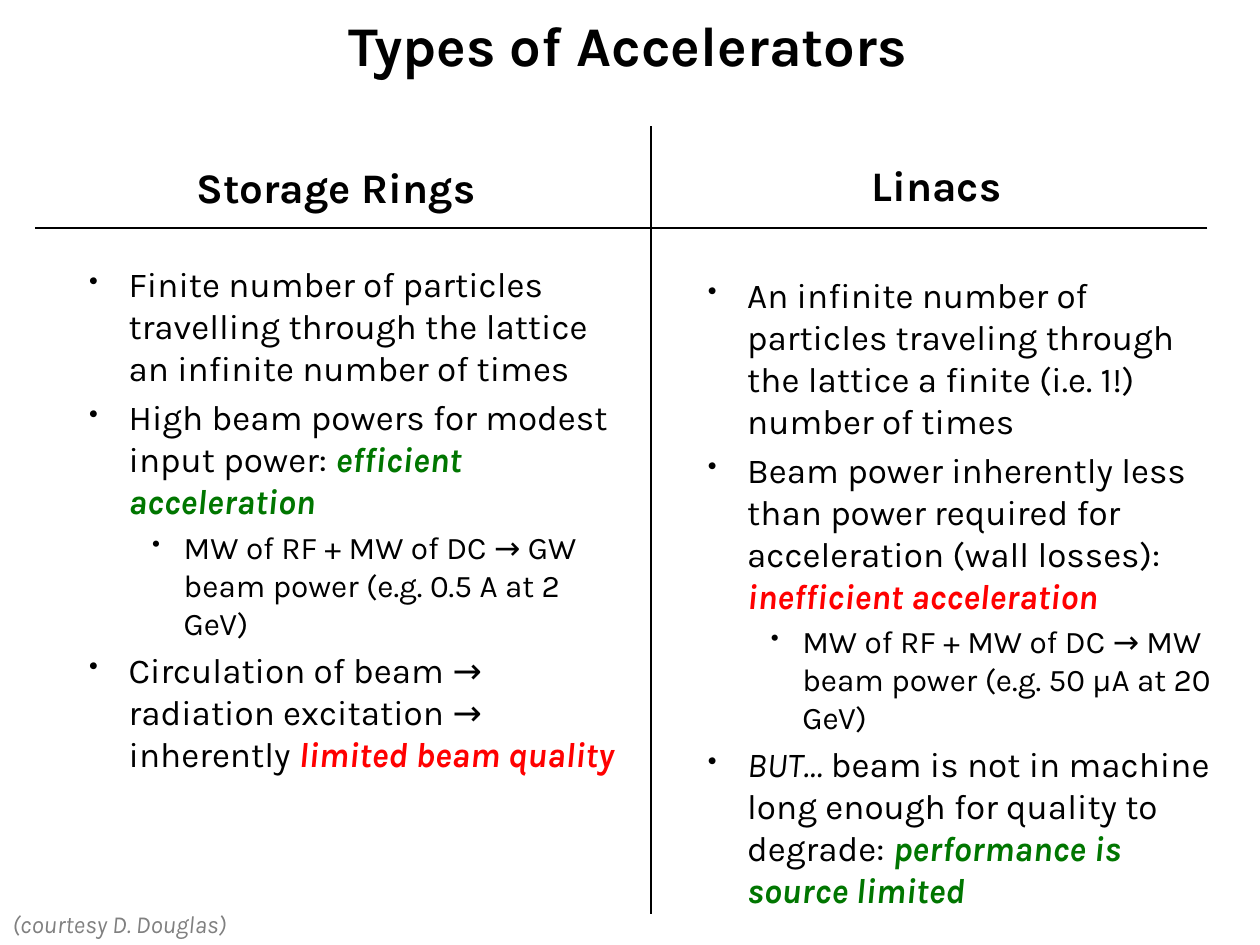
"""Build a two-column slide comparing storage rings with linacs."""
from dataclasses import dataclass

from lxml.etree import SubElement
from pptx import Presentation
from pptx.dml.color import RGBColor
from pptx.enum.shapes import MSO_CONNECTOR
from pptx.enum.text import MSO_ANCHOR, MSO_AUTO_SIZE, PP_ALIGN
from pptx.oxml.ns import qn
from pptx.util import Pt

FONT = "Karla"
BLACK, GRAY, GREEN, RED = "000000", "808080", "007600", "FF0000"
INDENTS = {1: (58.5, -22.5), 2: (90, -18)}
SIZES = {1: 20, 2: 18}


@dataclass
class Span:
    text: str
    color: str = BLACK
    bold: bool = False
    italic: bool = False


@dataclass
class Bullet:
    spans: list[Span]
    level: int = 1


@dataclass
class Label:
    text: str
    box: tuple[float, float, float, float]
    size: float
    color: str = BLACK
    bold: bool = True
    italic: bool = False


@dataclass
class Column:
    heading: Label
    box: tuple[float, float, float, float]
    bullets: list[Bullet]


def rgb(color: str) -> RGBColor:
    """Turn a hex string into a colour."""
    return RGBColor.from_string(color)


def strong(text: str, color: str) -> Span:
    """Return a coloured bold italic span."""
    return Span(text, color, True, True)


def style(r, size: float, color: str, bold: bool, italic: bool) -> None:
    """Format one run."""
    r.font.name, r.font.size = FONT, Pt(size)
    r.font.bold, r.font.italic = bold, italic
    r.font.color.rgb = rgb(color)


def add_box(s, box: tuple[float, float, float, float]):
    """Add an empty text box."""
    return s.shapes.add_textbox(*map(Pt, box))


def fill_label(sp, label: Label) -> None:
    """Put a single formatted line into a shape."""
    tf = sp.text_frame
    tf.text = label.text
    tf.word_wrap, tf.auto_size = True, MSO_AUTO_SIZE.NONE
    p = tf.paragraphs[0]
    p.alignment = PP_ALIGN.LEFT
    style(p.runs[0], label.size, label.color, label.bold, label.italic)


def add_label(s, label: Label) -> None:
    """Add a text box with a single line."""
    fill_label(add_box(s, label.box), label)


def fill_bullet(p, bullet: Bullet, space: float) -> None:
    """Write a bulleted paragraph with its indents and spans."""
    p.level, p.space_before = bullet.level, Pt(space)
    margin, indent = INDENTS[bullet.level]
    pPr = p._p.get_or_add_pPr()
    pPr.set("marL", str(int(Pt(margin))))
    pPr.set("indent", str(int(Pt(indent))))
    SubElement(pPr, qn("a:buSzPct")).set("val", "75000")
    SubElement(pPr, qn("a:buChar")).set("char", "•")
    for span in bullet.spans:
        r = p.add_run()
        r.text = span.text
        style(r, SIZES[bullet.level], span.color, span.bold, span.italic)


def add_column(s, column: Column) -> None:
    """Add a heading and its bulleted list."""
    add_label(s, column.heading)
    tf = add_box(s, column.box).text_frame
    tf.word_wrap, tf.margin_top = True, Pt(30)
    for i, bullet in enumerate(column.bullets):
        p = tf.add_paragraph() if i else tf.paragraphs[0]
        fill_bullet(p, bullet, SIZES[bullet.level] * 0.2 if i else 0)


def add_line(s, x1: float, y1: float, x2: float, y2: float) -> None:
    """Add a black rule without a shadow."""
    sp = s.shapes.add_connector(MSO_CONNECTOR.STRAIGHT, Pt(x1), Pt(y1), Pt(x2), Pt(y2))
    sp.line.color.rgb, sp.line.width = rgb(BLACK), Pt(1.5)
    SubElement(sp._element.spPr, qn("a:effectLst"))


TITLE = Label("Types of Accelerators", (192.2, 2.2, 361.4, 46), 32)
CREDIT = Label("(courtesy D. Douglas)", (0, 516.2, 150.5, 24.5), 14, GRAY, False, True)
COLUMNS = [
    Column(Label("Storage Rings", (105.1, 88.6, 185, 36), 24), (7.9, 120.2, 358.6, 414), [
        Bullet([Span("Finite number of particles travelling through the lattice "
                     "an infinite number of times")]),
        Bullet([Span("High beam powers for modest input power: "),
                strong("efficient acceleration", GREEN)]),
        Bullet([Span("MW of RF + MW of DC → GW beam power (e.g. 0.5 A at 2 GeV)")], 2),
        Bullet([Span("Circulation of beam → radiation excitation → inherently "),
                strong("limited beam quality", RED)]),
    ]),
    Column(Label("Linacs", (491, 87.8, 90.7, 36), 24), (361.4, 126, 342, 414), [
        Bullet([Span("An infinite number of particles traveling through the lattice "
                     "a finite (i.e. 1!) number of times")]),
        Bullet([Span("Beam power inherently less than power required for "
                     "acceleration (wall losses): "),
                strong("inefficient acceleration", RED)]),
        Bullet([Span("MW of RF + MW of DC → MW beam power (e.g. 50 μA at 20 GeV)")], 2),
        Bullet([Span("BUT…", italic=True),
                Span(" beam is not in machine long enough for quality to degrade: "),
                strong("performance is source limited", GREEN)]),
    ]),
]


def main() -> None:
    """Build and save the slide."""
    prs = Presentation()
    prs.slide_width, prs.slide_height = Pt(720), Pt(540)
    s = prs.slides.add_slide(prs.slide_layouts[5])
    title = s.shapes.title
    title.left, title.top, title.width, title.height = map(Pt, TITLE.box)
    fill_label(title, TITLE)
    title.text_frame.vertical_anchor = MSO_ANCHOR.MIDDLE
    for column in COLUMNS:
        add_column(s, column)
    add_label(s, CREDIT)
    add_line(s, 372, 72, 372, 522)
    add_line(s, 690, 130.3, 20.2, 130.3)
    prs.save("out.pptx")


if __name__ == "__main__":
    main()
